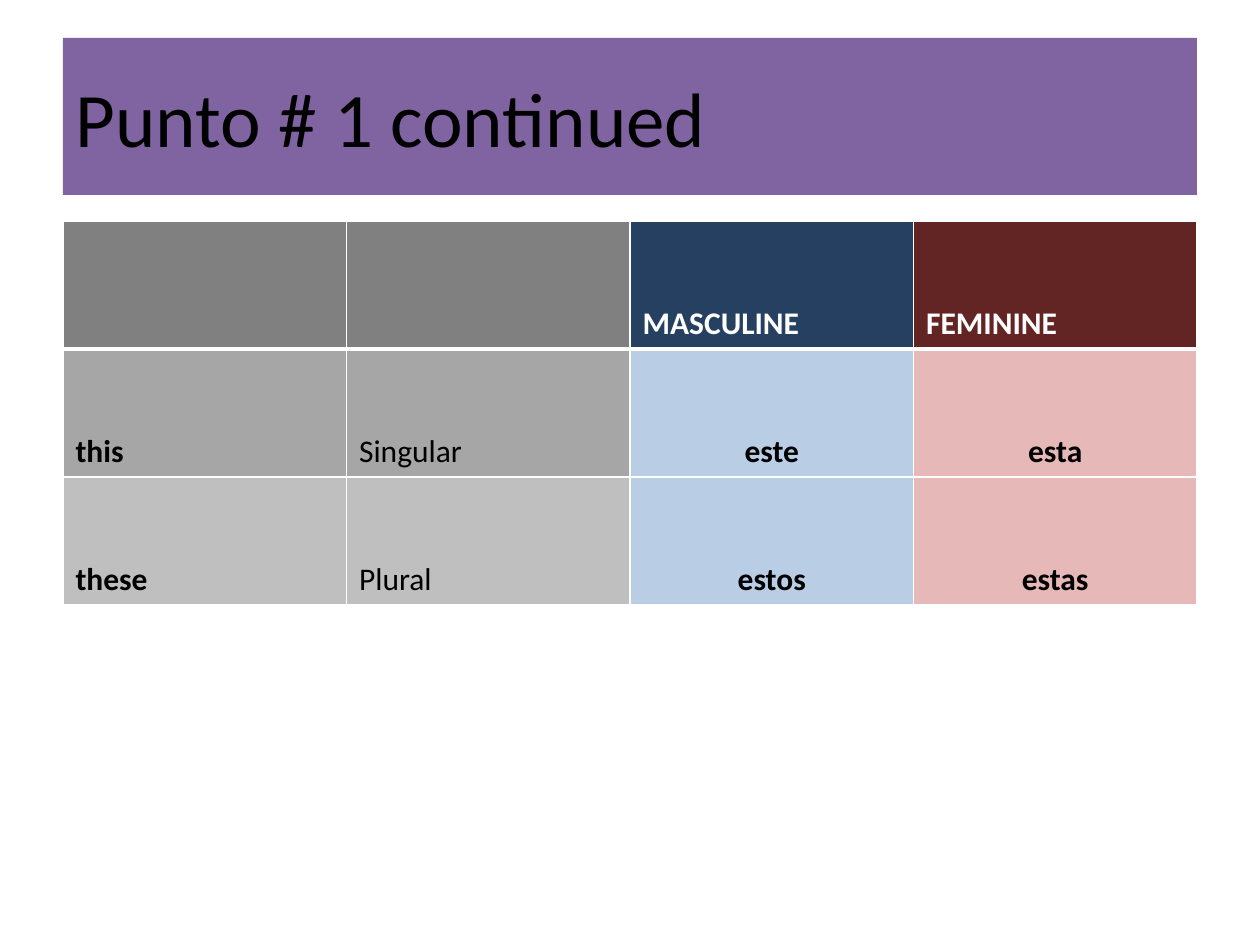
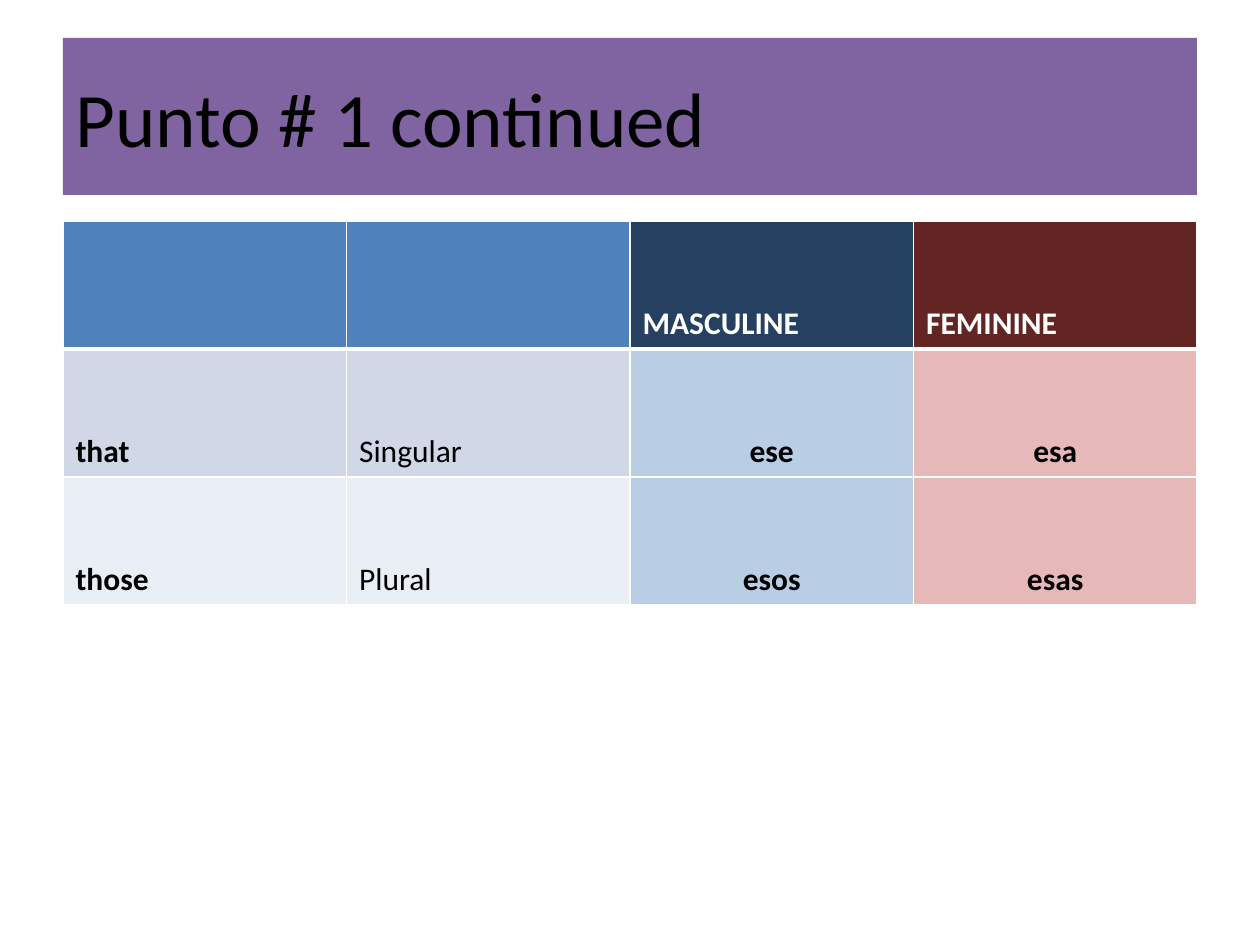
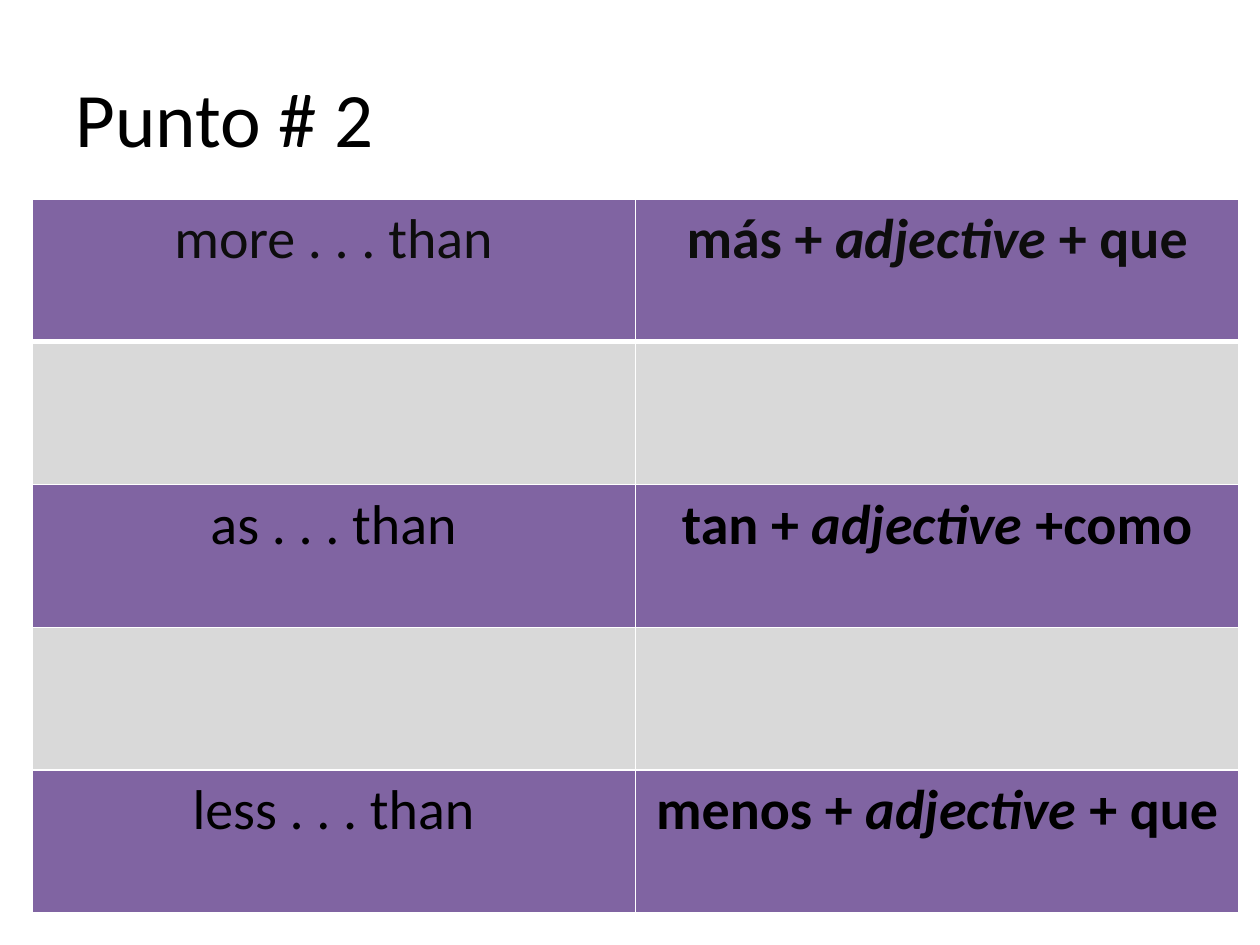
from lxml import etree
from pptx import Presentation
from pptx import util as u
from pptx.dml.color import RGBColor
from pptx.enum import shapes, text
from pptx.oxml.ns import qn

EMU_PER_PX = 914400 / 126
FONT = "Calibri"
BLACK, WHITE, INK = "000000", "FFFFFF", "0D0D0D"
PURPLE, PALE_GREY = "8064A2", "D9D9D9"
NAVY, MAROON, SKY, ROSE = "254061", "632523", "B9CDE5", "E6B9B8"
LEFT, CENTER = text.PP_ALIGN.LEFT, text.PP_ALIGN.CENTER


def px(n):
    """Turn pixels into EMU."""
    return u.Emu(round(n * EMU_PER_PX))


def rgb(value):
    """Turn a hex string into a colour."""
    return RGBColor.from_string(value)


def add_text(p, content, size=18, color=BLACK, bold=False, italic=False,
             align=LEFT, spacing=None):
    """Add one formatted run to a paragraph."""
    p.alignment = align
    if spacing:
        p.line_spacing = spacing
    r = p.add_run()
    r.text = content
    r.font.name, r.font.size = FONT, u.Pt(size)
    r.font.bold, r.font.italic = bold, italic
    r.font.color.rgb = rgb(color)


def add_title(s, content, fill=None):
    """Add the slide title, on a coloured band if a fill is given."""
    sp = s.shapes.add_shape(shapes.MSO_SHAPE.RECTANGLE,
                            px(63), px(38), px(1134), px(157))
    sp.shadow.inherit = False
    sp.line.fill.background()
    if fill:
        sp.fill.solid()
        sp.fill.fore_color.rgb = rgb(fill)
    else:
        sp.fill.background()
    tf = sp.text_frame
    tf.word_wrap = True
    tf.vertical_anchor = text.MSO_ANCHOR.MIDDLE
    add_text(tf.paragraphs[0], content, size=44)


def set_borders(cell, top, bottom):
    """Give a cell white borders, with top and bottom widths in points."""
    tc_pr = cell._tc.get_or_add_tcPr()
    widths = {"a:lnL": 1, "a:lnR": 1, "a:lnT": top, "a:lnB": bottom}
    for i, (tag, width) in enumerate(widths.items()):
        ln = etree.Element(qn(tag), w=str(u.Pt(width)))
        fill = etree.SubElement(ln, qn("a:solidFill"))
        etree.SubElement(fill, qn("a:srgbClr"), val=WHITE)
        tc_pr.insert(i, ln)


def add_grid(s, fills, left, top, width, height):
    """Add a table of equal cells from rows of fills and return it."""
    table = s.shapes.add_table(len(fills), len(fills[0]), px(left), px(top),
                               px(width), px(height)).table
    table.first_row = table.horz_banding = False
    for i, row in enumerate(fills):
        for j, fill in enumerate(row):
            cell = table.cell(i, j)
            cell.fill.solid()
            cell.fill.fore_color.rgb = rgb(fill)
            set_borders(cell, top=3 if i == 1 else 1, bottom=3 if i == 0 else 1)
    return table


def add_demonstratives(s, label_fills, rows):
    """Add a table of demonstratives by number and gender."""
    genders = [(NAVY, MAROON), (SKY, ROSE), (SKY, ROSE)]
    fills = [(label, label, *pair) for label, pair in zip(label_fills, genders)]
    table = add_grid(s, fills, 63, 221, 1134, 384)
    for i, row in enumerate([("", "", "MASCULINE", "FEMININE"), *rows]):
        for j, word in enumerate(row):
            if word:
                add_text(table.cell(i, j).text_frame.paragraphs[0], word,
                         color=BLACK if i else WHITE, bold=j != 1,
                         align=CENTER if i and j > 1 else LEFT, spacing=3)


def add_comparisons(s, rows):
    """Add a table of comparisons, with an empty row between entries."""
    fills = [(PALE_GREY if i % 2 else PURPLE,) * 2
             for i in range(2 * len(rows) - 1)]
    table = add_grid(s, fills, 32, 199, 1207, 714)
    for i, (english, before, after) in enumerate(rows):
        style = dict(size=32, color=BLACK if i else INK, align=CENTER)
        phrase, formula = (table.cell(2 * i, j).text_frame.paragraphs[0]
                           for j in range(2))
        add_text(phrase, english, **style)
        add_text(formula, before, bold=True, **style)
        add_text(formula, "adjective", bold=True, italic=True, **style)
        add_text(formula, after, bold=True, **style)


def main():
    """Build the three slides and save them."""
    prs = Presentation()
    prs.slide_width, prs.slide_height = px(1260), px(945)
    blank = prs.slide_layouts[6]

    demonstratives = [
        (("808080", "A6A6A6", "BFBFBF"),
         [("this", "Singular", "este", "esta"),
          ("these", "Plural", "estos", "estas")]),
        (("4F81BD", "D0D8E8", "E9EDF4"),
         [("that", "Singular", "ese", "esa"),
          ("those", "Plural", "esos", "esas")]),
    ]
    for label_fills, rows in demonstratives:
        s = prs.slides.add_slide(blank)
        add_title(s, "Punto # 1 continued", fill=PURPLE)
        add_demonstratives(s, label_fills, rows)

    s = prs.slides.add_slide(blank)
    add_title(s, "Punto # 2")
    add_comparisons(s, [("more . . . than", "más + ", " + que"),
                        ("as . . . than", "tan + ", " +como"),
                        ("less . . . than", "menos + ", " + que")])
    prs.save("out.pptx")


if __name__ == "__main__":
    main()
